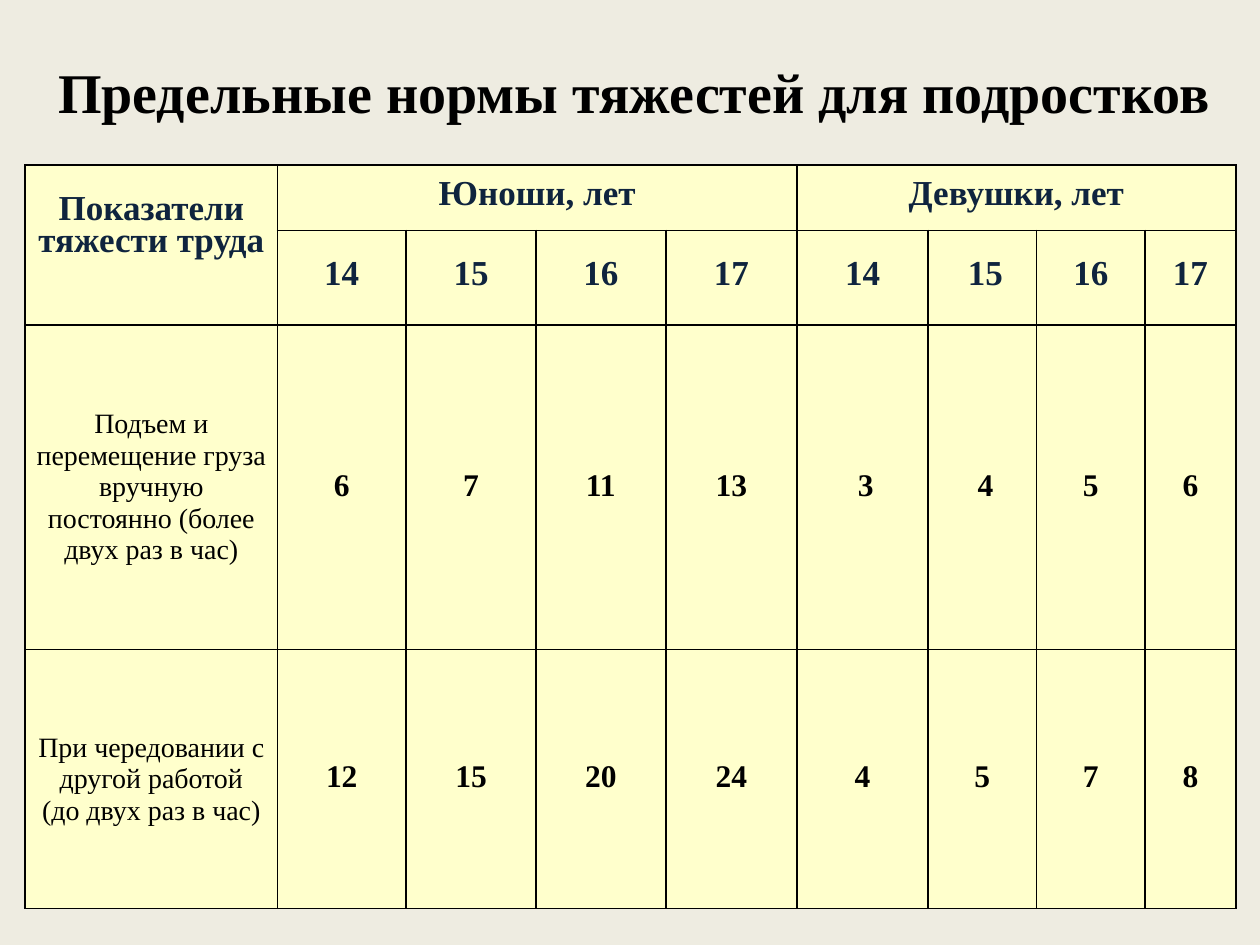
from lxml.etree import SubElement
from pptx import Presentation
from pptx.dml.color import RGBColor
from pptx.enum.text import MSO_ANCHOR, PP_ALIGN
from pptx.oxml.ns import qn
from pptx.util import Inches, Pt

FONT = "Times New Roman"
PAGE = RGBColor(0xEE, 0xEC, 0xE1)
CREAM = RGBColor(0xFF, 0xFF, 0xCC)
NAVY = RGBColor(0x0F, 0x24, 0x3E)
BLACK = RGBColor(0, 0, 0)

TITLE_BOX = (0.35, 0.3, 9.37, 0.85)
TABLE_BOX = (0.2, 1.31, 9.61, 5.67)
COLUMN_SHARES = (2, 1.02, 1.03, 1.03, 1.04, 1.04, 0.86, 0.86, 0.72)
ROW_SHARES = (0.52, 0.52, 2.58, 2.06)
GROUPS = {1: "Юноши, лет", 5: "Девушки, лет"}
AGES = ("14", "15", "16", "17") * 2
LIMITS = (
    ("Подъем и перемещение груза вручную постоянно (более двух раз в час)",
     ("6", "7", "11", "13", "3", "4", "5", "6")),
    ("При чередовании с другой работой\n(до двух раз в час)",
     ("12", "15", "20", "24", "4", "5", "7", "8")),
)
INDENTED = {(1, 6), (2, 5), (2, 6)}


def write_text(frame, text, size=20, color=NAVY, bold=True, line=None, indent=0):
    frame.text = text
    for paragraph in frame.paragraphs:
        paragraph.alignment = PP_ALIGN.CENTER
        if line:
            paragraph.line_spacing = Pt(line)
        if indent:
            paragraph._p.get_or_add_pPr().set("indent", str(Inches(indent)))
        for run in paragraph.runs:
            run.font.name = FONT
            run.font.size = Pt(size)
            run.font.bold = bold
            run.font.color.rgb = color


def style_cell(cell):
    properties = cell._tc.get_or_add_tcPr()
    for side in ("lnL", "lnR", "lnT", "lnB"):
        border = SubElement(properties, qn(f"a:{side}"), w=str(Pt(1)))
        fill = SubElement(border, qn("a:solidFill"))
        SubElement(fill, qn("a:srgbClr"), val=str(BLACK))
    cell.fill.solid()
    cell.fill.fore_color.rgb = CREAM
    cell.vertical_anchor = MSO_ANCHOR.MIDDLE
    cell.margin_left = cell.margin_right = Inches(0.07)
    cell.margin_top = cell.margin_bottom = 0


def place_title(slide, box):
    title = slide.shapes.title
    title.left, title.top, title.width, title.height = map(Inches, box)
    title.text_frame.vertical_anchor = MSO_ANCHOR.MIDDLE
    write_text(title.text_frame, "Предельные нормы тяжестей для подростков",
               size=32, color=BLACK)


def share_out(tracks, shares, length, attribute):
    for track, share in zip(tracks, shares):
        setattr(track, attribute, Inches(length * share / sum(shares)))


def place_limits(slide, box):
    limits = slide.shapes.add_table(
        len(ROW_SHARES), len(COLUMN_SHARES), *map(Inches, box)).table
    limits.first_row = limits.horz_banding = False
    share_out(limits.columns, COLUMN_SHARES, box[2], "width")
    share_out(limits.rows, ROW_SHARES, box[3], "height")
    for cell in limits.iter_cells():
        style_cell(cell)

    def fill_cell(row, column, text, **style):
        indent = 0.05 if (row, column) in INDENTED else 0
        write_text(limits.cell(row, column).text_frame, text,
                   line=18, indent=indent, **style)

    corner = limits.cell(0, 0)
    corner.merge(limits.cell(1, 0))
    corner.vertical_anchor = MSO_ANCHOR.TOP
    corner.margin_top = Pt(18)
    fill_cell(0, 0, "Показатели тяжести труда")
    for column, group in GROUPS.items():
        limits.cell(0, column).merge(limits.cell(0, column + 3))
        fill_cell(0, column, group)
    for column, age in enumerate(AGES, 1):
        fill_cell(1, column, age)
    for row, (activity, weights) in enumerate(LIMITS, 2):
        fill_cell(row, 0, activity, size=16, color=BLACK, bold=False)
        for column, weight in enumerate(weights, 1):
            fill_cell(row, column, weight, size=18, color=BLACK)


def main():
    deck = Presentation()
    deck.slide_width, deck.slide_height = Inches(10), Inches(7.5)
    slide = deck.slides.add_slide(deck.slide_layouts.get_by_name("Title Only"))
    slide.background.fill.solid()
    slide.background.fill.fore_color.rgb = PAGE
    place_title(slide, TITLE_BOX)
    place_limits(slide, TABLE_BOX)
    deck.save("out.pptx")


if __name__ == "__main__":
    main()
